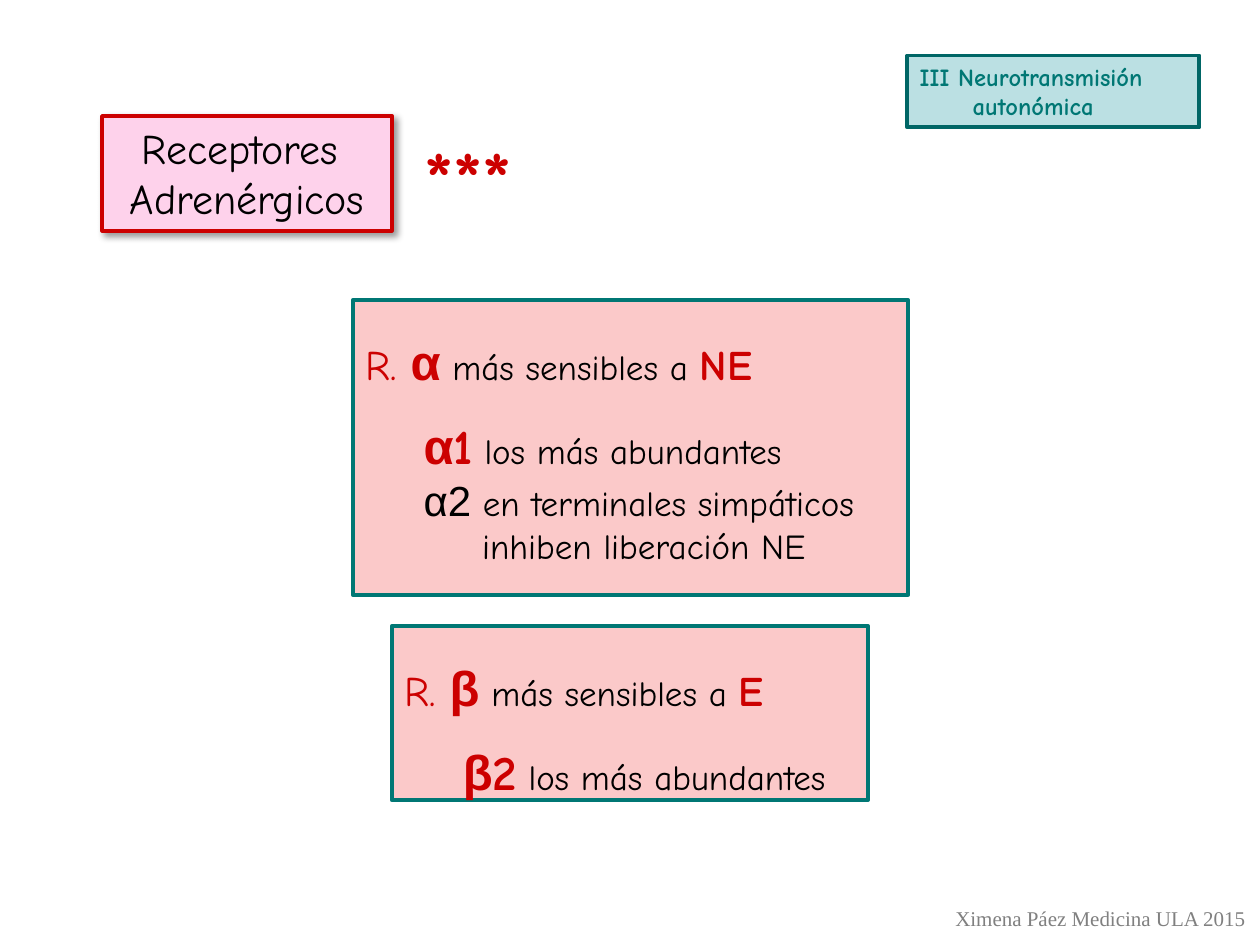
from lxml import etree
from pptx import Presentation
from pptx.dml.color import RGBColor
from pptx.enum.shapes import MSO_SHAPE
from pptx.enum.text import MSO_ANCHOR, MSO_AUTO_SIZE, PP_ALIGN
from pptx.oxml.ns import qn
from pptx.util import Cm, Pt

RECT = MSO_SHAPE.RECTANGLE
TOP = MSO_ANCHOR.TOP
GROW, FIXED = MSO_AUTO_SIZE.SHAPE_TO_FIT_TEXT, MSO_AUTO_SIZE.NONE
LEFT, CENTER = PP_ALIGN.LEFT, PP_ALIGN.CENTER

RED, TEAL, PINK, BLACK = "CC0000", "007774", "FBC9C9", "000000"

# Text styles: font name, size, bold, colour
COMIC, ARIAL = "Comic Neue", "Arial"
TITLE = (COMIC, 24, False, BLACK)
BODY = (COMIC, 20, False, BLACK)
LABEL = (COMIC, 24, False, RED)
KEY = (COMIC, 24, True, RED)
GREEK = (ARIAL, 28, True, RED)
NUMBER = (COMIC, 28, True, RED)
PLAIN_GREEK = (ARIAL, 24, False, BLACK)
STARS = (COMIC, 44, True, RED)
HEADER = (COMIC, 14, True, TEAL)
FOOTER = ("Times New Roman", 12, False, "808080")

INDENT = 1.18  # one level in the receptor boxes, cm
GAP = 14.5     # space below a receptor heading, pt


def rgb(value):
    return RGBColor.from_string(value)


def add_shadow(props, blur, dist, alpha):
    """Add a soft outer shadow falling to the lower right."""
    effects = props.find(qn("a:effectLst"))
    if effects is None:
        effects = etree.SubElement(props, qn("a:effectLst"))
    shadow = etree.SubElement(effects, qn("a:outerShdw"), blurRad=str(Pt(blur)),
                              dist=str(Pt(dist)), dir="2700000", algn="tl")
    color = etree.SubElement(shadow, qn("a:srgbClr"), val=BLACK)
    etree.SubElement(color, qn("a:alpha"), val=str(alpha * 1000))


def add_run(p, text, style):
    name, size, bold, color = style
    r = p.add_run()
    r.text = text
    for key, value in {"name": name, "size": Pt(size), "bold": bold}.items():
        setattr(r.font, key, value)
    r.font.color.rgb = rgb(color)
    return r


def write(sp, lines, align=LEFT, **frame):
    """Fill a shape with lines, each (indent in cm, space before in pt, runs)."""
    tf = sp.text_frame
    settings = {"word_wrap": False, "auto_size": GROW, "vertical_anchor": TOP}
    for key, value in (settings | frame).items():
        setattr(tf, key, value)
    for i, (indent, before, runs) in enumerate(lines):
        p = tf.add_paragraph() if i else tf.paragraphs[0]
        p.alignment = align
        if before:
            p.space_before = Pt(before)
        if indent:
            p_pr = p._p.get_or_add_pPr()
            p_pr.set("marL", str(Cm(indent)))
            p_pr.set("indent", "0")
        for text, style in runs:
            add_run(p, text, style)


def add_box(s, box, fill, line):
    sp = s.shapes.add_shape(RECT, *map(Cm, box))
    sp.shadow.inherit = False
    sp.fill.solid()
    sp.fill.fore_color.rgb = rgb(fill)
    sp.line.color.rgb = rgb(line)
    sp.line.width = Pt(2.25)
    return sp


def add_receptor_box(s, box, lines):
    sp = add_box(s, box, PINK, TEAL)
    write(sp, lines, word_wrap=True, auto_size=FIXED, margin_top=Cm(0.63))


def add_label(s, box, text, style, align=LEFT):
    sp = s.shapes.add_textbox(*map(Cm, box))
    write(sp, [(0, 0, [(text, style)])], align)
    return sp


def main():
    prs = Presentation()
    prs.slide_width, prs.slide_height = Cm(25.4), Cm(19.05)
    s = prs.slides.add_slide(prs.slide_layouts[6])

    # Title with its stars
    title = add_box(s, (2.06, 2.34, 5.84, 2.31), "FED2EB", RED)
    add_shadow(title._element.spPr, 4, 3, 40)
    write(title, [(0, 0, [("Receptores ", TITLE)]),
                  (0, 0, [("Adrenérgicos", TITLE)])], CENTER)
    stars = add_label(s, (8.31, 2.49, 3, 2.13), "***", STARS)
    star_run = stars.text_frame.paragraphs[0].runs[0]
    r_pr = star_run._r.get_or_add_rPr()
    add_shadow(r_pr, 0, 3, 100)
    r_pr.find(qn("a:solidFill")).addnext(r_pr.find(qn("a:effectLst")))

    # Alpha receptors
    add_receptor_box(s, (7.11, 6.05, 11.2, 5.94), [
        (0, 0, [("R. ", LABEL), ("α", GREEK), (" más sensibles a ", BODY),
                ("NE", KEY)]),
        (INDENT, GAP, [("α", GREEK), ("1", NUMBER),
                       (" los más abundantes", BODY)]),
        (INDENT, 0, [("α2", PLAIN_GREEK), (" en terminales simpáticos", BODY)]),
        (2 * INDENT, 0, [("inhiben liberación NE", BODY)]),
    ])

    # Beta receptors
    add_receptor_box(s, (7.9, 12.62, 9.6, 3.51), [
        (0, 0, [("R. ", LABEL), ("β", GREEK), (" más sensibles a ", BODY),
                ("E", KEY)]),
        (INDENT, GAP, [("β", GREEK), ("2", NUMBER),
                       (" los más abundantes", BODY)]),
    ])

    # Section header and footer
    header = add_box(s, (18.29, 1.12, 5.89, 1.45), "BBE0E3", "006666")
    write(header, [(0, 0, [("III Neurotransmisión", HEADER)]),
                   (1.07, 0, [("autonómica", HEADER)])])
    add_label(s, (18.97, 18.14, 6.43, 0.76), "Ximena Páez Medicina ULA 2015",
              FOOTER, CENTER)

    prs.save("out.pptx")


if __name__ == "__main__":
    main()
